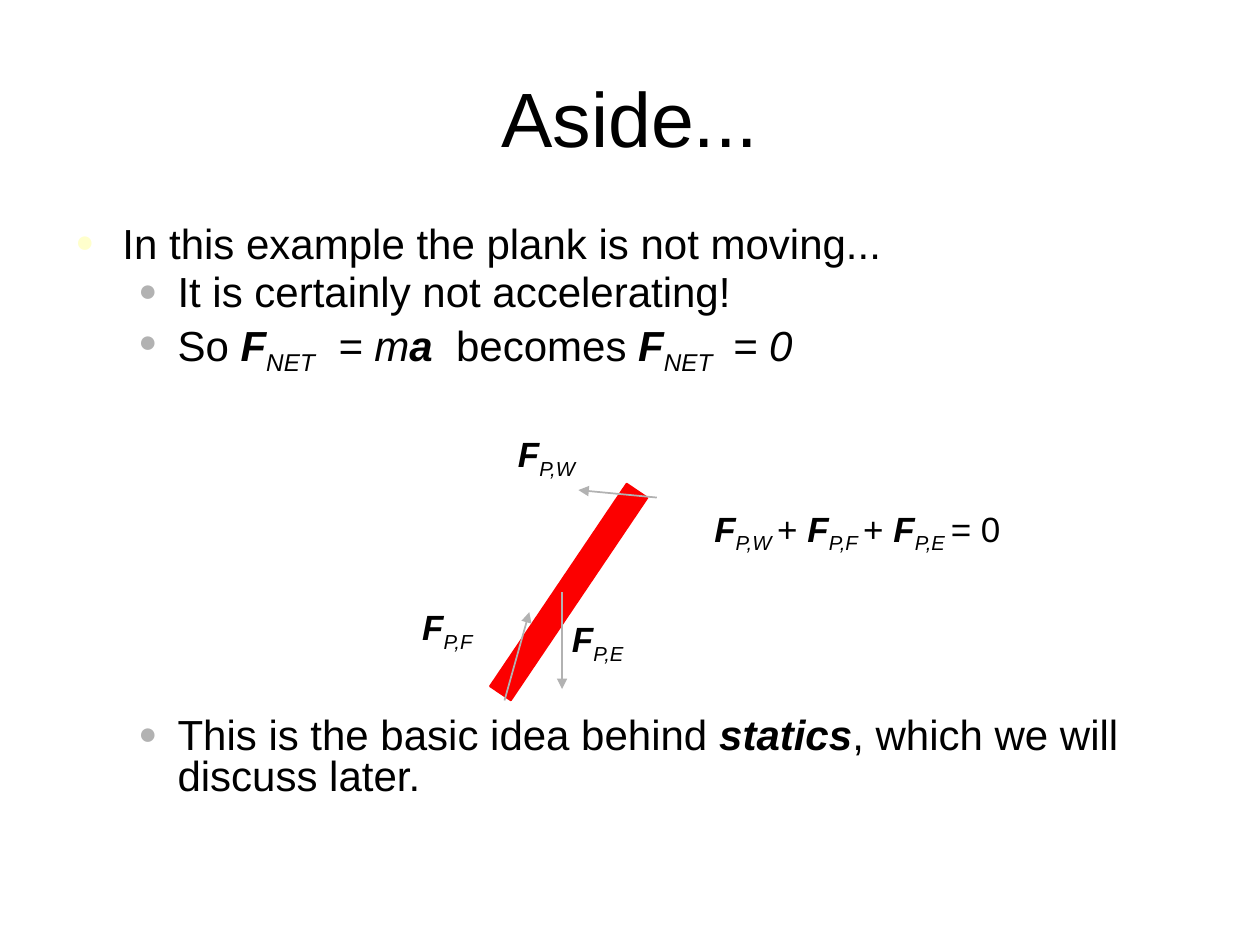
from lxml import etree
from pptx import Presentation
from pptx.dml.color import RGBColor
from pptx.enum.shapes import MSO_CONNECTOR, MSO_SHAPE
from pptx.enum.text import MSO_ANCHOR, PP_ALIGN
from pptx.oxml.ns import qn
from pptx.util import Cm, Pt

STRAIGHT = MSO_CONNECTOR.STRAIGHT
RECTANGLE = MSO_SHAPE.RECTANGLE
MIDDLE = MSO_ANCHOR.MIDDLE
CENTER = PP_ALIGN.CENTER

FONT = "Arial"
BLACK, RED, GREY, CREAM = "000000", "FC0000", "B2B2B2", "FFFFCC"

# Run styles: (bold, italic, subscript)
PLAIN = (False, False, False)
ITALIC = (False, True, False)
VECTOR = (True, True, False)
SUBSCRIPT = (False, True, True)


def color(hex_string):
    return RGBColor.from_string(hex_string)


def force(agent):
    """Runs for the force on the plank P by another body."""
    return [("F", VECTOR), (f"P,{agent}", SUBSCRIPT)]


def write_runs(paragraph, pieces, size):
    for text, (bold, italic, subscript) in pieces:
        run = paragraph.add_run()
        run.text = text
        run.font.name, run.font.size = FONT, Pt(size)
        run.font.bold, run.font.italic = bold, italic
        run.font.color.rgb = color(BLACK)
        if subscript:
            run.font._element.set("baseline", "-25000")


def add_bullet(paragraph, margin, hang, bullet_color):
    properties = paragraph._p.get_or_add_pPr()
    properties.set("marL", str(Cm(margin)))
    properties.set("indent", str(-Cm(hang)))
    bullet = etree.SubElement(properties, qn("a:buClr"))
    etree.SubElement(bullet, qn("a:srgbClr"), val=bullet_color)
    etree.SubElement(properties, qn("a:buSzPct"), val="75000")
    etree.SubElement(properties, qn("a:buFont"), typeface=FONT)
    etree.SubElement(properties, qn("a:buChar"), char="●")


def add_title(slide, left, top, width, height):
    frame = slide.shapes.add_textbox(Cm(left), Cm(top), Cm(width), Cm(height)).text_frame
    frame.word_wrap = True
    frame.vertical_anchor = MIDDLE
    heading = frame.paragraphs[0]
    heading.alignment = CENTER
    write_runs(heading, [("Aside...", PLAIN)], 44)


def add_argument(slide, left, top, width, height):
    frame = slide.shapes.add_textbox(Cm(left), Cm(top), Cm(width), Cm(height)).text_frame
    frame.word_wrap = True
    main = (0.95, 0.95, CREAM)
    detail = (2.06, 0.79, GREY)
    diagram_gap = 199  # points left free for the force diagram
    points = [
        (main, 0, [("In this example the plank is not moving...", PLAIN)]),
        (detail, 4.8, [("It is certainly not accelerating!", PLAIN)]),
        (detail, 4.8, [("So ", PLAIN), ("F", VECTOR), ("NET", SUBSCRIPT),
                       ("  = m", ITALIC), ("a", VECTOR), ("  becomes ", PLAIN),
                       ("F", VECTOR), ("NET   ", SUBSCRIPT), ("= 0", ITALIC)]),
        (detail, diagram_gap, [("This is the basic idea behind ", PLAIN),
                               ("statics", VECTOR),
                               (", which we will discuss later.", PLAIN)]),
    ]
    for index, (level, space, pieces) in enumerate(points):
        point = frame.paragraphs[0] if index == 0 else frame.add_paragraph()
        point.line_spacing = 0.8
        point.space_before = Pt(space)
        add_bullet(point, *level)
        write_runs(point, pieces, 24)


def add_formula(slide, left, top, width, pieces):
    frame = slide.shapes.add_textbox(Cm(left), Cm(top), Cm(width), Cm(1.02)).text_frame
    frame.word_wrap = False
    formula = frame.paragraphs[0]
    formula.line_spacing = 0.9
    write_runs(formula, pieces, 20)


def add_arrow(slide, x1, y1, x2, y2):
    arrow = slide.shapes.add_connector(STRAIGHT, Cm(x1), Cm(y1), Cm(x2), Cm(y2))
    arrow.line.color.rgb = color(GREY)
    arrow.line.width = Pt(1)
    etree.SubElement(arrow.line._get_or_add_ln(), qn("a:tailEnd"), type="triangle")
    etree.SubElement(arrow._element.spPr, qn("a:effectLst"))


def add_force_diagram(slide, left, top):
    # Leaning plank
    plank = slide.shapes.add_shape(
        RECTANGLE, Cm(left + 2.95), Cm(top + 0.86), Cm(0.51), Cm(4.93))
    plank.rotation = 34
    plank.shadow.inherit = False
    plank.fill.solid()
    plank.fill.fore_color.rgb = color(RED)
    plank.line.color.rgb = color(RED)
    plank.line.width = Pt(1)

    # Forces by earth, floor and wall: arrow ends, then label left, top, width
    forces = {
        "E": ((3.07, 3.33, 3.07, 5.28), (3.02, 3.73, 1.8)),
        "F": ((1.91, 5.51, 2.41, 3.73), (0, 3.48, 1.78)),
        "W": ((4.98, 1.42, 3.4, 1.27), (1.93, 0, 1.93)),
    }
    for agent, ((x1, y1, x2, y2), (label_x, label_y, width)) in forces.items():
        add_arrow(slide, left + x1, top + y1, left + x2, top + y2)
        add_formula(slide, left + label_x, top + label_y, width, force(agent))


def add_balance(slide, left, top, width):
    pieces = []
    for agent, operator in (("W", "+ "), ("F", "+ "), ("E", "= 0")):
        pieces += force(f"{agent} ") + [(operator, PLAIN)]
    add_formula(slide, left, top, width, pieces)


def main():
    presentation = Presentation()
    presentation.slide_width, presentation.slide_height = Cm(25.4), Cm(19.05)
    slide = presentation.slides.add_slide(presentation.slide_layouts[6])
    add_title(slide, 1.27, 0.76, 22.86, 3.18)
    add_argument(slide, 1.27, 4.45, 22.86, 12.57)
    add_balance(slide, 14.15, 10.11, 6.71)
    add_force_diagram(slide, 8.26, 8.61)
    presentation.save("out.pptx")


if __name__ == "__main__":
    main()
